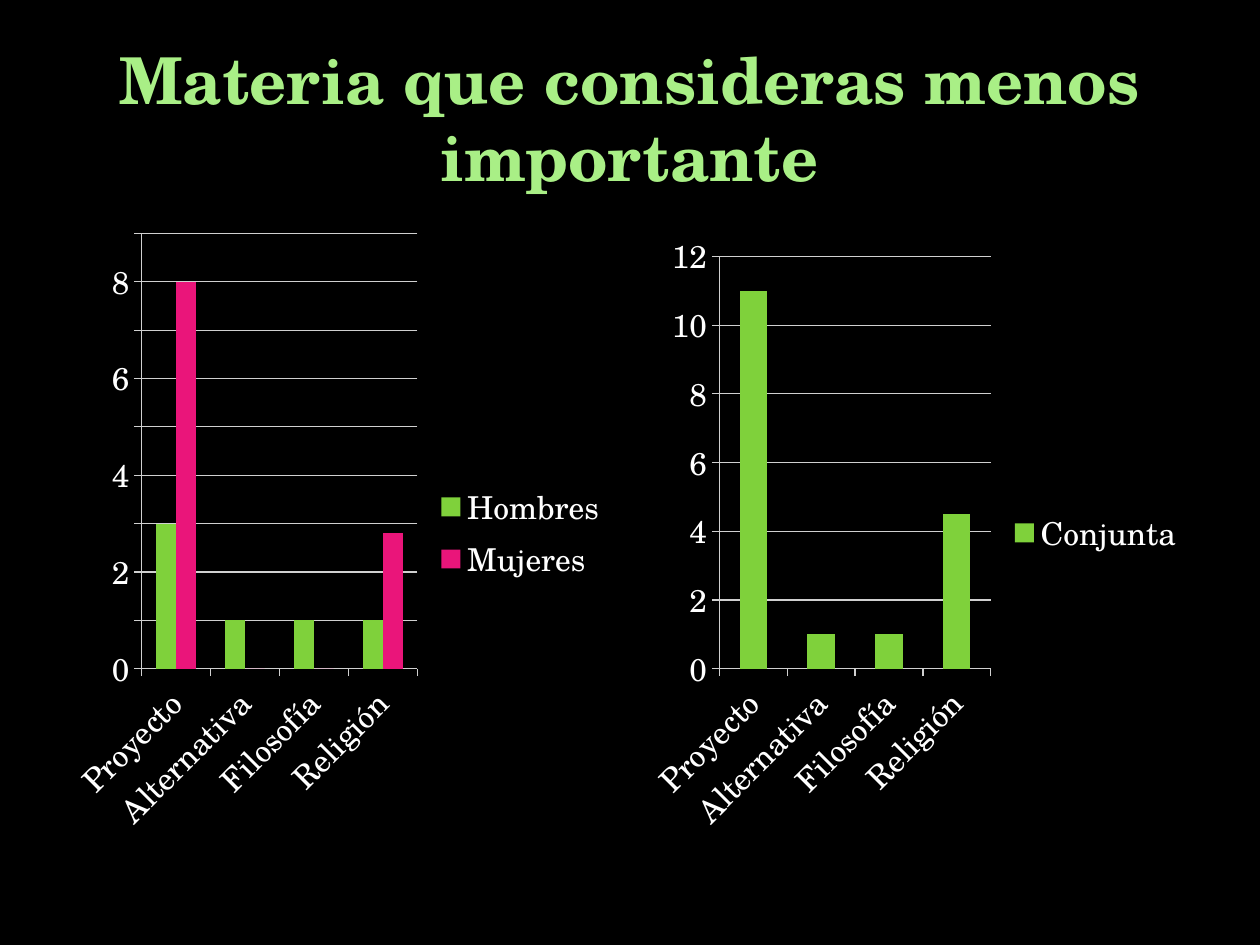
from pptx import Presentation
from pptx import util as u
from pptx.chart.data import CategoryChartData
from pptx.dml.color import RGBColor
from pptx.enum import chart as ch, text

COLORS = {"bg": "000000", "title": "A9EF86", "text": "FFFFFF", "line": "D0D0D0",
          "green": "7FD13B", "pink": "EA157A"}
FONT = "TeX Gyre Schola"
SUBJECTS = ["Proyecto", "Alternativa", "Filosofía", "Religión"]


def px(n):
    return u.Emu(round(n * 914400 / 126))


def rgb(name):
    return RGBColor.from_string(COLORS[name])


class SlideBuilder:
    def __init__(self, slide):
        self.s = slide
        fill = slide.background.fill
        fill.solid()
        fill.fore_color.rgb = rgb("bg")

    def style(self, font, size, color):
        font.name, font.size = FONT, u.Pt(size)
        font.color.rgb = rgb(color)

    def line(self, line):
        line.color.rgb = rgb("line")
        line.width = u.Pt(0.72)

    def title(self, wording, x, y, w, h):
        tf = self.s.shapes.add_textbox(px(x), px(y), px(w), px(h)).text_frame
        tf.word_wrap = True
        tf.vertical_anchor = text.MSO_ANCHOR.MIDDLE
        tf.text = wording
        p = tf.paragraphs[0]
        p.alignment = text.PP_ALIGN.CENTER
        r = p.runs[0]
        self.style(r.font, 36.9, "title")
        r.font.bold = True

    def columns(self, x, y, w, h, series):
        """series holds (name, values, colour) for each group of columns."""
        data = CategoryChartData()
        data.categories = SUBJECTS
        for name, values, _ in series:
            data.add_series(name, values)
        chart = self.s.shapes.add_chart(ch.XL_CHART_TYPE.COLUMN_CLUSTERED,
                                        px(x), px(y), px(w), px(h), data).chart
        self.style(chart.font, 18, "text")
        chart.has_title = False
        chart.has_legend = True
        chart.legend.position = ch.XL_LEGEND_POSITION.RIGHT
        chart.legend.include_in_layout = False

        plot = chart.plots[0]
        plot.gap_width, plot.overlap = 150, 0
        plot.vary_by_categories = False
        for bars, (_, _, color) in zip(plot.series, series):
            bars.format.fill.solid()
            bars.format.fill.fore_color.rgb = rgb(color)

        for axis in (chart.category_axis, chart.value_axis):
            axis.major_tick_mark = ch.XL_TICK_MARK.OUTSIDE
            axis.minor_tick_mark = ch.XL_TICK_MARK.NONE
            self.line(axis.format.line)
        chart.value_axis.has_major_gridlines = True
        self.line(chart.value_axis.major_gridlines.format.line)


def main():
    prs = Presentation()
    prs.slide_width, prs.slide_height = px(1260), px(945)
    b = SlideBuilder(prs.slides.add_slide(prs.slide_layouts[6]))
    b.title("Materia que consideras menos importante", 63, 38, 1134, 158)
    b.columns(63, 221, 557, 624,
              [("Hombres", [3, 1, 1, 1], "green"), ("Mujeres", [8, 0, 0, 2.8], "pink")])
    b.columns(640, 221, 557, 624, [("Conjunta", [11, 1, 1, 4.5], "green")])
    prs.save("out.pptx")


if __name__ == "__main__":
    main()
